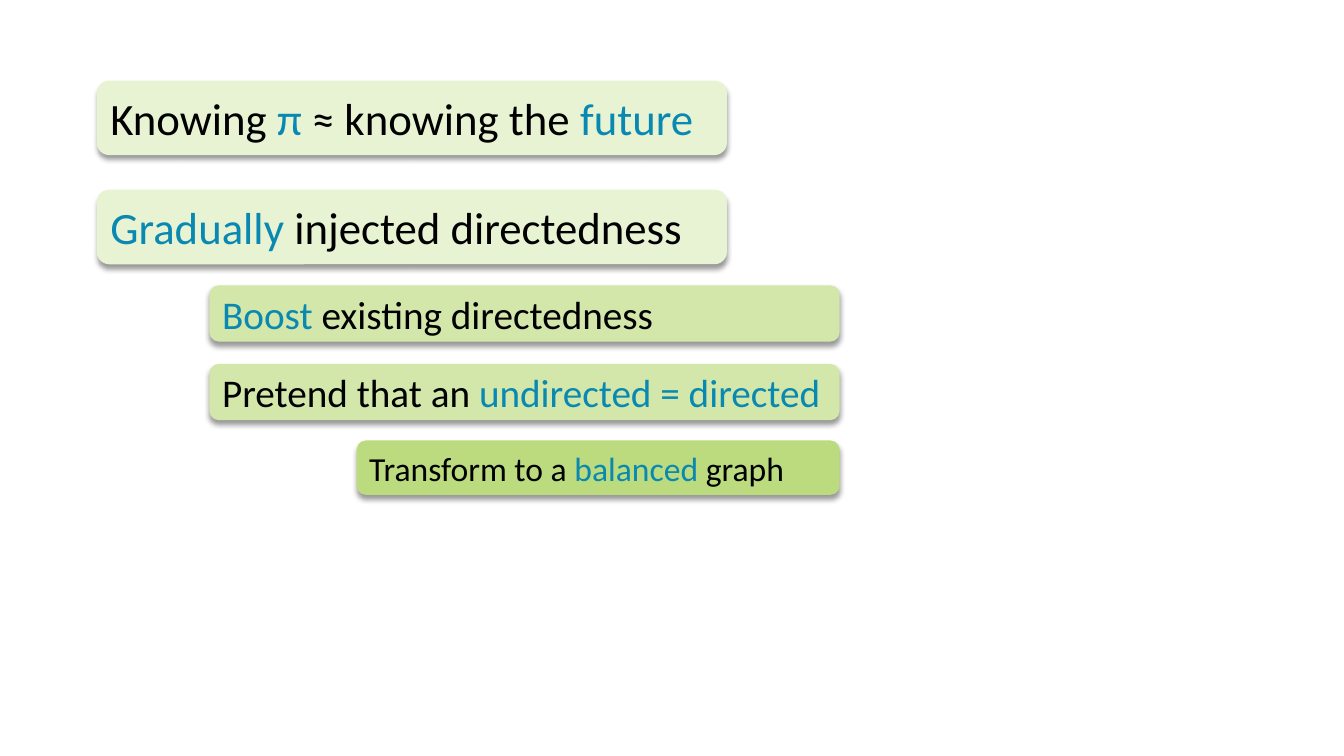
from lxml import etree
from pptx import Presentation
from pptx import util as u
from pptx.dml.color import RGBColor
from pptx.enum import shapes, text
from pptx.oxml import ns

COLOURS = {
    "text": "000000",
    "accent": "0989B1",
    "shadow": "000000",
    "point": "E8F3D4",
    "detail": "D2E7A9",
    "step": "BBDB7E",
}

LEVELS = {
    "point": {"left": 2.44, "width": 15.88, "height": 1.88, "size": 32},
    "detail": {"left": 5.28, "width": 15.88, "height": 1.42, "size": 28},
    "step": {"left": 8.99, "width": 12.17, "height": 1.37, "size": 24},
}

STATEMENTS = [
    ("point", 2.03, [("Knowing ", "text"), ("π", "accent"),
                     (" ≈ knowing the ", "text"), ("future", "accent")]),
    ("point", 4.78, [("Gradually", "accent"), (" injected directedness", "text")]),
    ("detail", 7.19, [("Boost", "accent"), (" existing directedness", "text")]),
    ("detail", 9.17, [("Pretend that an ", "text"), ("undirected = directed", "accent")]),
    ("step", 11.1, [("Transform to a ", "text"), ("balanced", "accent"), (" graph", "text")]),
]


class SlideBuilder:
    font = "Calibri"

    def __init__(self, slide):
        self.slide = slide

    def colour(self, name):
        return RGBColor.from_string(COLOURS[name])

    def statement(self, level, top, runs):
        style = LEVELS[level]
        shape = self.slide.shapes.add_shape(
            shapes.MSO_SHAPE.ROUNDED_RECTANGLE, u.Cm(style["left"]), u.Cm(top),
            u.Cm(style["width"]), u.Cm(style["height"]))
        shape.fill.solid()
        shape.fill.fore_color.rgb = self.colour(level)
        shape.line.fill.background()
        self.shadow(shape)
        frame = shape.text_frame
        frame.word_wrap = True
        frame.vertical_anchor = text.MSO_ANCHOR.MIDDLE
        paragraph = frame.paragraphs[0]
        paragraph.alignment = text.PP_ALIGN.LEFT
        for words, colour in runs:
            self.run(paragraph, words, colour, style["size"])

    def run(self, paragraph, words, colour, size):
        run = paragraph.add_run()
        run.text = words
        run.font.name = self.font
        run.font.size = u.Pt(size)
        run.font.color.rgb = self.colour(colour)

    def shadow(self, shape):
        shape.shadow.inherit = False
        effects = shape.element.spPr.find(ns.qn("a:effectLst"))
        shadow = etree.SubElement(
            effects, ns.qn("a:outerShdw"), blurRad=str(u.Pt(4)), dist=str(u.Pt(3)),
            dir="5400000", algn="t", rotWithShape="0")
        colour = etree.SubElement(shadow, ns.qn("a:srgbClr"), val=COLOURS["shadow"])
        etree.SubElement(colour, ns.qn("a:alpha"), val="40000")


def main():
    presentation = Presentation()
    presentation.slide_width = u.Cm(33.87)
    presentation.slide_height = u.Cm(19.05)
    slide = presentation.slides.add_slide(presentation.slide_layouts[6])
    builder = SlideBuilder(slide)
    for level, top, runs in STATEMENTS:
        builder.statement(level, top, runs)
    presentation.save("out.pptx")


if __name__ == "__main__":
    main()
